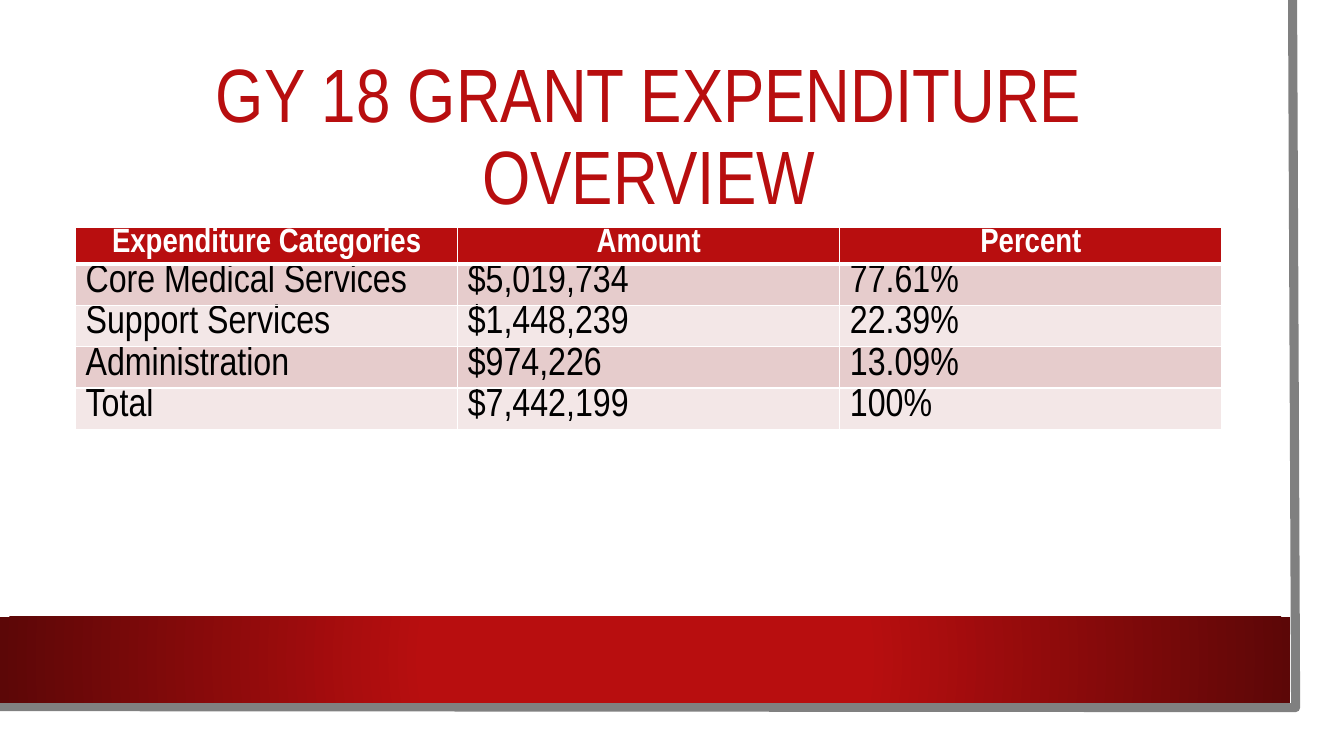
from lxml import etree
from pptx import Presentation
from pptx.dml.color import RGBColor as RGB
from pptx.enum.shapes import MSO_SHAPE as SHAPE
from pptx.enum.text import MSO_ANCHOR as ANCHOR, MSO_AUTO_SIZE as AUTO, PP_ALIGN as ALIGN
from pptx.oxml import parse_xml
from pptx.oxml.ns import nsdecls, qn
from pptx.util import Inches, Pt

COLORS = {"white": "FFFFFF", "black": "000000", "red": "B80E0F", "dark": "5C0707",
          "gray": "808080", "band": "E6CCCC", "pale": "F3E7E7"}
FONT = "Arial Narrow"
ROWS = [
    ("Expenditure Categories", "Amount", "Percent"),
    ("Core Medical Services", "$5,019,734", "77.61%"),
    ("Support Services", "$1,448,239", "22.39%"),
    ("Administration", "$974,226", "13.09%"),
    ("Total", "$7,442,199", "100%"),
]


def rgb(name):
    return RGB.from_string(COLORS[name])


def set_attrs(obj, **values):
    for name, value in values.items():
        setattr(obj, name, value)


class SlideBuilder:
    def __init__(self, prs):
        self.slide = prs.slides.add_slide(prs.slide_layouts[5])
        self.shapes = self.slide.shapes

    def text(self, p, text, size, color, align, bold=False):
        p.alignment = align
        r = p.add_run()
        r.text = text
        set_attrs(r.font, name=FONT, size=Pt(size), bold=bold)
        r.font.color.rgb = rgb(color)

    def rect(self, left, top, width, height, color):
        sp = self.shapes.add_shape(SHAPE.RECTANGLE, *map(Inches, (left, top, width, height)))
        sp.shadow.inherit = False
        sp.line.fill.background()
        sp.fill.solid()
        sp.fill.fore_color.rgb = rgb(color)
        return sp

    def radial_band(self, left, top, width, height, stops):
        """Rectangle with a gradient spreading from its centre."""
        sp = self.rect(left, top, width, height, "red")
        sp.fill.gradient()
        for stop, (position, color) in zip(sp.fill.gradient_stops, stops):
            stop.position = position
            stop.color.rgb = rgb(color)
        grad = sp._element.spPr.find(qn("a:gradFill"))
        grad.remove(grad.find(qn("a:lin")))
        path = etree.SubElement(grad, qn("a:path"), path="circle")
        etree.SubElement(path, qn("a:fillToRect"), dict.fromkeys("ltrb", "50000"))

    def outline(self, points, color, width):
        (x, y), *rest = [(Inches(x), Inches(y)) for x, y in points]
        builder = self.shapes.build_freeform(x, y)
        builder.add_line_segments(rest, close=False)
        sp = builder.convert_to_shape()
        sp.shadow.inherit = False
        sp.fill.background()
        sp.line.color.rgb = rgb(color)
        sp.line.width = Pt(width)

    def title(self, text, left, top, width, height):
        sp = self.shapes.title
        set_attrs(sp, left=Inches(left), top=Inches(top),
                  width=Inches(width), height=Inches(height))
        tf = sp.text_frame
        set_attrs(tf, word_wrap=True, auto_size=AUTO.NONE, vertical_anchor=ANCHOR.MIDDLE)
        p = tf.paragraphs[0]
        p.line_spacing = 0.9
        self.text(p, text, 54, "red", ALIGN.CENTER)
        self.shapes._spTree.append(sp._element)  # bring in front of the backdrop

    def borders(self, cell, bottom):
        tcPr = cell._tc.get_or_add_tcPr()
        widths = {"lnL": 1, "lnR": 1, "lnT": 1, "lnB": bottom}
        for i, (tag, width) in enumerate(widths.items()):
            tcPr.insert(i, parse_xml(
                f'<a:{tag} {nsdecls("a")} w="{Pt(width)}"><a:solidFill>'
                f'<a:srgbClr val="{COLORS["white"]}"/></a:solidFill></a:{tag}>'))

    def table(self, rows, left, top, width, header_height, row_height):
        heights = [header_height] + [row_height] * (len(rows) - 1)
        frame = self.shapes.add_table(len(rows), len(rows[0]), Inches(left), Inches(top),
                                      Inches(width), Inches(sum(heights)))
        for i, (row, height) in enumerate(zip(rows, heights)):
            frame.table.rows[i].height = Inches(height)
            header = i == 0
            fill = "red" if header else "band" if i % 2 else "pale"
            for j, value in enumerate(row):
                cell = frame.table.cell(i, j)
                set_attrs(cell, margin_top=0, margin_bottom=0)
                cell.fill.solid()
                cell.fill.fore_color.rgb = rgb(fill)
                self.borders(cell, bottom=3 if header else 1)
                p = cell.text_frame.paragraphs[0]
                if header:
                    self.text(p, value, 24, "white", ALIGN.CENTER, bold=True)
                else:
                    self.text(p, value, 28, "black", ALIGN.LEFT)


def main():
    prs = Presentation()
    set_attrs(prs, slide_width=Inches(13.33), slide_height=Inches(7.5))
    s = SlideBuilder(prs)
    s.rect(0, 0, 13.1, 7.27, "white")
    s.outline([(12.82, 0), (12.85, 7.02), (-0.03, 7.01)], "gray", 6.5)
    s.radial_band(0, 6.12, 12.8, 0.85, [(0.34, "red"), (1, "dark")])
    s.title("GY 18 GRANT EXPENDITURE OVERVIEW", 0.75, 0.75, 11.37, 1.26)
    s.table(ROWS, 0.75, 2.26, 11.37, 0.36, 0.41)
    prs.save("out.pptx")


if __name__ == "__main__":
    main()
